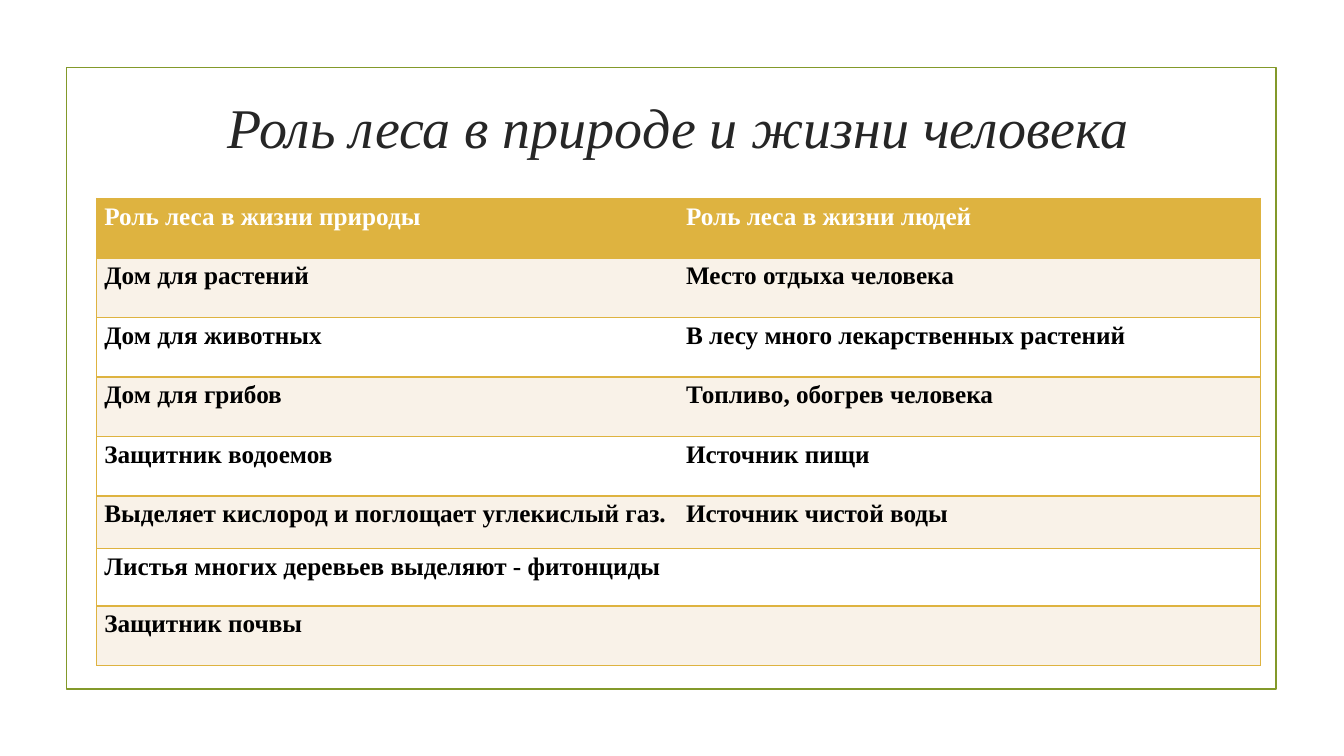
from lxml import etree
from pptx import Presentation
from pptx import util as u
from pptx.dml.color import RGBColor
from pptx.enum import shapes, text
from pptx.oxml import ns

FONT = "Times New Roman"
GOLD, CREAM, WHITE, BLACK = "DEB340", "F9F2E8", "FFFFFF", "000000"
ROWS = [
    ("Роль леса в жизни природы", "Роль леса в жизни людей"),
    ("Дом для растений", "Место отдыха человека"),
    ("Дом для животных", "В лесу много лекарственных растений"),
    ("Дом для грибов", "Топливо, обогрев человека"),
    ("Защитник водоемов", "Источник пищи"),
    ("Выделяет кислород и поглощает углекислый газ.", "Источник чистой воды"),
    ("Листья многих деревьев выделяют - фитонциды", ""),
    ("Защитник почвы", ""),
]
ROW_HEIGHTS = [1.5, 1.5, 1.5, 1.5, 1.5, 1.32, 1.45, 1.5]


def color(value):
    """Turn a hex string into a colour."""
    return RGBColor.from_string(value)


def set_font(paragraph, size, value, bold=False, italic=False):
    """Format all text of a paragraph."""
    font = paragraph.font
    font.name, font.size = FONT, u.Pt(size)
    font.bold, font.italic = bold, italic
    font.color.rgb = color(value)


def add_frame(slide, left, top, width, height):
    """Draw the outline behind the slide content."""
    frame = slide.shapes.add_shape(
        shapes.MSO_SHAPE.RECTANGLE, u.Cm(left), u.Cm(top), u.Cm(width), u.Cm(height))
    frame.shadow.inherit = False
    frame.fill.background()
    frame.line.color.rgb = color("83992A")
    frame.line.width = u.Pt(1.25)
    slide.shapes.element.insert(2, frame.element)


def add_title(slide, left, top, width, height):
    """Place and format the title."""
    title = slide.shapes.title
    title.left, title.top = u.Cm(left), u.Cm(top)
    title.width, title.height = u.Cm(width), u.Cm(height)
    title.text_frame.text = "Роль леса в природе и жизни человека"
    title.text_frame.vertical_anchor = text.MSO_ANCHOR.MIDDLE
    paragraph = title.text_frame.paragraphs[0]
    paragraph.alignment = text.PP_ALIGN.CENTER
    set_font(paragraph, 40, "262626", italic=True)


def set_borders(cell, sides):
    """Draw gold lines on the given sides of a cell and none elsewhere."""
    properties = cell._tc.get_or_add_tcPr()
    for index, side in enumerate("LRTB"):
        line = etree.Element(ns.qn(f"a:ln{side}"), w=str(u.Pt(1)))
        if side in sides:
            fill = etree.SubElement(line, ns.qn("a:solidFill"))
            etree.SubElement(fill, ns.qn("a:srgbClr"), val=GOLD)
        else:
            etree.SubElement(line, ns.qn("a:noFill"))
        properties.insert(index, line)


def fill_cell(cell, wording, background, foreground):
    """Write and format one table cell."""
    cell.fill.solid()
    cell.fill.fore_color.rgb = color(background)
    cell.margin_left = cell.margin_right = u.Cm(0.19)
    cell.margin_top = cell.margin_bottom = 0
    cell.text = wording
    paragraph = cell.text_frame.paragraphs[0]
    paragraph.alignment = text.PP_ALIGN.JUSTIFY
    paragraph.line_spacing = 1.15
    set_font(paragraph, 18, foreground, bold=True)


def add_roles_table(slide, left, top, width):
    """Build the two-column table of the roles of the forest."""
    table = slide.shapes.add_table(
        len(ROWS), 2, u.Cm(left), u.Cm(top), u.Cm(width), u.Cm(sum(ROW_HEIGHTS))).table
    for column in table.columns:
        column.width = u.Cm(width / 2)
    for row_index, (wordings, height) in enumerate(zip(ROWS, ROW_HEIGHTS)):
        table.rows[row_index].height = u.Cm(height)
        band = CREAM if row_index % 2 else WHITE
        background, foreground = (band, BLACK) if row_index else (GOLD, WHITE)
        for column_index, wording in enumerate(wordings):
            cell = table.cell(row_index, column_index)
            fill_cell(cell, wording, background, foreground)
            set_borders(cell, "RTB" if column_index else "LTB")


def main():
    """Build the presentation."""
    presentation = Presentation()
    presentation.slide_width, presentation.slide_height = u.Cm(33.87), u.Cm(19.05)
    slide = presentation.slides.add_slide(presentation.slide_layouts[5])
    add_frame(slide, 1.68, 1.7, 30.48, 15.67)
    add_title(slide, 2.03, 2.24, 30.1, 1.88)
    add_roles_table(slide, 2.44, 5, 29.32)
    presentation.save("out.pptx")


if __name__ == "__main__":
    main()
